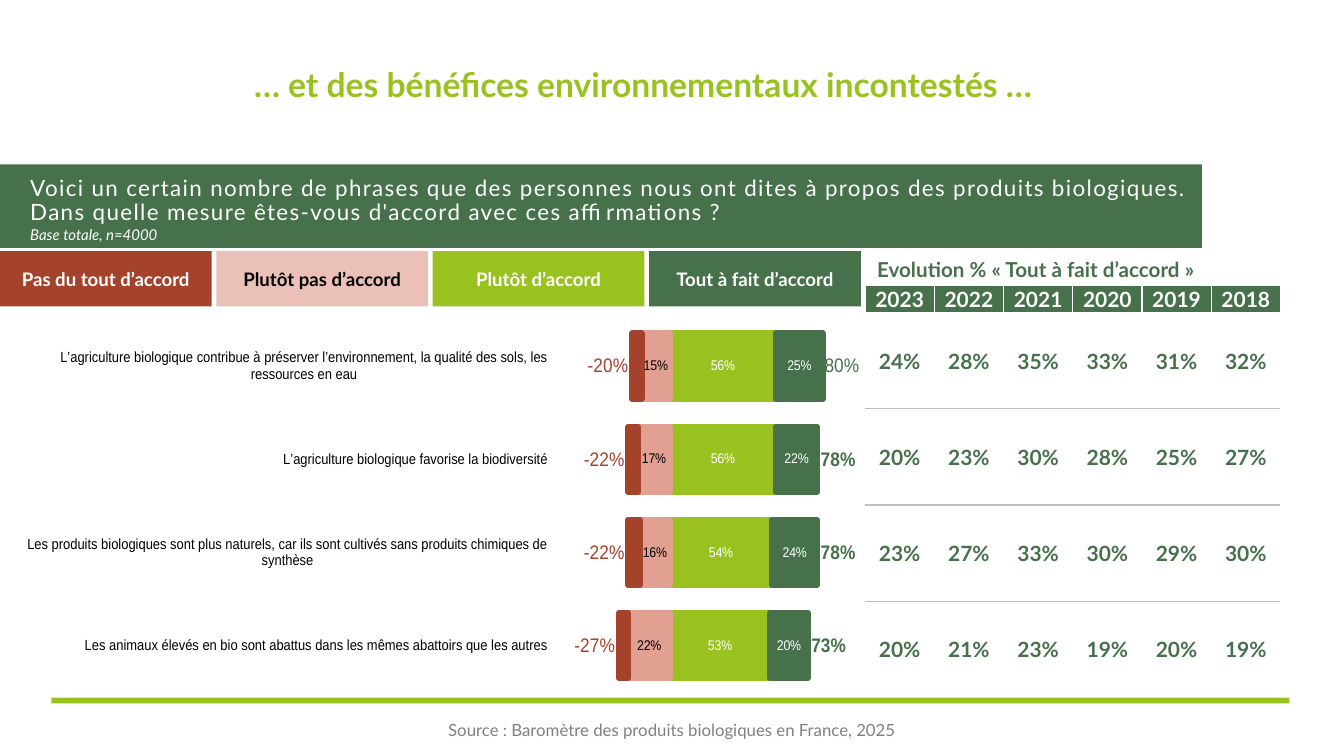
import copy

import pptx
import pptx.chart.data
import pptx.dml.color
import pptx.enum.chart
import pptx.enum.shapes
import pptx.enum.text
import pptx.oxml
import pptx.oxml.ns
import pptx.util

WIDTH, HEIGHT = 13.33, 7.5
GREEN, LIME, PINK, RED = "46714B", "99C221", "E2A092", "A5422C"
WHITE, BLACK, GREY, RULE = "FFFFFF", "000000", "808080", "BFBFBF"

TITLE = "… et des bénéfices environnementaux incontestés …"
QUESTION = ("Voici un certain nombre de phrases que des personnes nous ont dites à propos des "
            "produits biologiques. Dans quelle mesure êtes-vous d'accord avec ces affirmations ?")
BASE = "Base totale, n=4000"
SOURCE = "Source : Baromètre des produits biologiques en France, 2025"
EVOLUTION = "Evolution % «\u00a0Tout à fait d’accord\u00a0»"
LEGEND = [("Pas du tout d’accord", RED, WHITE), ("Plutôt pas d’accord", "EBC0B6", BLACK),
          ("Plutôt d’accord", LIME, WHITE), ("Tout à fait d’accord", GREEN, WHITE)]
STATEMENTS = [
    "Les animaux élevés en bio sont abattus dans les mêmes abattoirs que les autres",
    "Les produits biologiques sont plus naturels, car ils sont cultivés sans produits "
    "chimiques de synthèse",
    "L’agriculture biologique favorise la biodiversité",
    "L’agriculture biologique contribue à préserver l’environnement, la qualité des sols, "
    "les ressources en eau"]
# name, values, bar colour, label colour
ANSWERS = [("Plutôt d’accord", (0.53, 0.54, 0.56, 0.56), LIME, WHITE),
           ("Tout à fait d’accord", (0.2, 0.24, 0.22, 0.25), GREEN, WHITE),
           ("Plutôt pas d’accord", (-0.22, -0.16, -0.17, -0.15), PINK, BLACK),
           ("Pas du tout d’accord", (-0.05, -0.06, -0.05, -0.05), RED, None)]
# name, values, label colour, number format, bold
TOTALS = [("Total d’accord", (0.73, 0.78, 0.78, 0.8), GREEN, "0%", True),
          ("Total pas d’accord", (-0.27, -0.22, -0.22, -0.2), RED, "0%;-0%", False)]
TRACKING = [("2023", "2022", "2021", "2020", "2019", "2018"),
            ("24%", "28%", "35%", "33%", "31%", "32%"),
            ("20%", "23%", "30%", "28%", "25%", "27%"),
            ("23%", "27%", "33%", "30%", "29%", "30%"),
            ("20%", "21%", "23%", "19%", "20%", "19%")]

CENTER = pptx.enum.text.PP_ALIGN.CENTER
LEFT = pptx.enum.text.PP_ALIGN.LEFT
MIDDLE = pptx.enum.text.MSO_ANCHOR.MIDDLE
POSITION = pptx.enum.chart.XL_LABEL_POSITION


def color(value):
    return pptx.dml.color.RGBColor.from_string(value)


def inches(*lengths):
    return [pptx.util.Inches(length) for length in lengths]


def style(font, size, value, bold=False, name="Lato"):
    font.name, font.size, font.bold = name, pptx.util.Pt(size), bold
    font.color.rgb = color(value)


def write(frame, text, size, value, bold=False, align=LEFT, margins=(0, 0, 0, 0)):
    frame.word_wrap = True
    frame.vertical_anchor = MIDDLE
    (frame.margin_left, frame.margin_top,
     frame.margin_right, frame.margin_bottom) = inches(*margins)
    para = frame.paragraphs[0]
    para.alignment = align
    span = para.add_run()
    span.text = text
    style(span.font, size, value, bold)
    return para, span


def add_rectangle(page, place, fill):
    box = page.shapes.add_shape(pptx.enum.shapes.MSO_SHAPE.RECTANGLE, *inches(*place))
    box.shadow.inherit = False
    box.fill.solid()
    box.fill.fore_color.rgb = color(fill)
    box.line.fill.background()
    return box


def add_text(page, place, *content, **options):
    box = page.shapes.add_textbox(*inches(*place))
    return write(box.text_frame, *content, **options)


def add_second_axes(chart):
    """Move the totals to a clustered plot on hidden axes of its own."""
    area = chart.element.xpath("c:chart/c:plotArea")[0]
    stacked = area.xpath("c:barChart")[0]
    clustered = copy.deepcopy(stacked)
    stacked.addnext(clustered)
    for bars in stacked.xpath("c:ser")[len(ANSWERS):] + clustered.xpath("c:ser")[:len(ANSWERS)]:
        bars.getparent().remove(bars)
    clustered.xpath("c:grouping")[0].set("val", "clustered")
    axes = area.xpath("c:catAx | c:valAx")
    new_ids = {axis.xpath("c:axId")[0].get("val"): str(5000 + i) for i, axis in enumerate(axes)}
    last = axes[-1]
    for axis in axes:
        twin = copy.deepcopy(axis)
        twin.xpath("c:delete")[0].set("val", "1")
        last.addnext(twin)
        last = twin
        for link in twin.xpath("c:axId | c:crossAx"):
            link.set("val", new_ids[link.get("val")])
    for link in clustered.xpath("c:axId"):
        link.set("val", new_ids[link.get("val")])


def set_plot_area(chart, x, y, w, h):
    area = chart.element.xpath("c:chart/c:plotArea")[0]
    for layout in area.xpath("c:layout"):
        area.remove(layout)
    area.insert(0, pptx.oxml.parse_xml(
        f'<c:layout {pptx.oxml.ns.nsdecls("c")}><c:manualLayout><c:layoutTarget val="inner"/>'
        f'<c:xMode val="edge"/><c:yMode val="edge"/><c:x val="{x}"/><c:y val="{y}"/>'
        f'<c:w val="{w}"/><c:h val="{h}"/></c:manualLayout></c:layout>'))


def add_labels(series, size, value, number_format, position, bold=False):
    labels = series.data_labels
    labels.show_value = True
    labels.number_format, labels.number_format_is_linked = number_format, False
    labels.position = position
    style(labels.font, size, value, bold, "Arial")


def add_answers(page):
    data = pptx.chart.data.CategoryChartData(number_format="0%")
    data.categories = STATEMENTS
    for name, values, *_ in ANSWERS + TOTALS:
        data.add_series(name, values)
    chart = page.shapes.add_chart(pptx.enum.chart.XL_CHART_TYPE.BAR_STACKED,
                                  *inches(0.27, 3.17, 8.27, 3.7), data).chart
    chart.has_legend = chart.has_title = False
    style(chart.font, 10, BLACK, name="Arial")
    names, scale = chart.category_axis, chart.value_axis
    names.tick_label_position = pptx.enum.chart.XL_TICK_LABEL_POSITION.LOW
    names.format.line.fill.background()
    style(names.tick_labels.font, 10.5, BLACK, name="Arial")
    scale.minimum_scale, scale.maximum_scale = -0.6, 1
    scale.has_major_gridlines = scale.visible = False
    chart.plots[0].gap_width, chart.plots[0].overlap = 43, 100
    add_second_axes(chart)
    set_plot_area(chart, 0.585, 0, 0.412, 0.999)
    for plot in chart.plots:
        plot.vary_by_categories = False
    stacked, totals = chart.plots
    for series, (_, _, fill, ink) in zip(stacked.series, ANSWERS):
        series.invert_if_negative = False
        series.format.fill.solid()
        series.format.fill.fore_color.rgb = color(fill)
        series.format.line.color.rgb = color(fill)
        series.format.line.width = pptx.util.Pt(5)
        if ink:
            add_labels(series, 10, ink, "0%;0%", POSITION.CENTER)
    for series, (_, _, ink, number_format, bold) in zip(totals.series, TOTALS):
        series.invert_if_negative = False
        series.format.fill.background()
        series.format.line.fill.background()
        add_labels(series, 14, ink, number_format, POSITION.OUTSIDE_END, bold)
    top_label = totals.series[0].points[3].data_label
    span = top_label.text_frame.paragraphs[0].add_run()
    span.text = "80%"
    style(span.font, 14, GREEN, name="Arial")
    top_label.position = POSITION.OUTSIDE_END


def set_border(cell, sides, value):
    """Draw the listed sides 1 pt wide and clear the others."""
    properties = cell._tc.get_or_add_tcPr()
    for i, side in enumerate("LRTB"):
        paint = (f'<a:solidFill><a:srgbClr val="{value}"/></a:solidFill>'
                 if side in sides else "<a:noFill/>")
        properties.insert(i, pptx.oxml.parse_xml(
            f'<a:ln{side} {pptx.oxml.ns.nsdecls("a")} w="12700">{paint}</a:ln{side}>'))


def add_tracking(page):
    rows, columns = len(TRACKING), len(TRACKING[0])
    table = page.shapes.add_table(rows, columns, *inches(8.58, 2.83, 4.12, 4.09)).table
    for column in table.columns:
        column.width = pptx.util.Inches(4.12 / columns)
    for r, values in enumerate(TRACKING):
        header = r == 0
        table.rows[r].height = pptx.util.Inches(0.27 if header else 0.955)
        for c, value in enumerate(values):
            cell = table.cell(r, c)
            cell.fill.solid()
            cell.fill.fore_color.rgb = color(GREEN if header else WHITE)
            write(cell.text_frame, value, 15, WHITE if header else GREEN, True, CENTER)
            cell.vertical_anchor = MIDDLE
            (cell.margin_left, cell.margin_top,
             cell.margin_right, cell.margin_bottom) = inches(0.01, 0.01, 0.01, 0)
            sides = "LRT" if header else ("T" if r > 1 else "") + ("B" if r < rows - 1 else "")
            set_border(cell, sides, WHITE if header else RULE)


def main():
    deck = pptx.Presentation()
    deck.slide_width, deck.slide_height = inches(WIDTH, HEIGHT)
    page = deck.slides.add_slide(deck.slide_layouts[5])
    title = page.shapes.title
    title.left, title.top, title.width, title.height = inches(2.52, 0.38, 9.4, 0.95)
    para, _ = write(title.text_frame, TITLE, 24, LIME, True)
    para.line_spacing = 0.9

    add_rectangle(page, (0, 1.63, 11.92, 0.83), GREEN)
    add_rectangle(page, (0.51, 6.92, 12.28, 0.06), LIME)
    add_text(page, (3.85, 6.97, 5.63, 0.54), SOURCE, 12, GREY, align=CENTER)
    para, span = add_text(page, (0.3, 1.75, 11.62, 0.48), QUESTION, 16, WHITE)
    para.line_spacing = pptx.util.Pt(17.3)
    span.font._element.set("spc", "100")
    _, span = add_text(page, (0.3, 2.23, 11.62, 0.2), BASE, 10.7, WHITE)
    span.font.italic = True

    add_answers(page)
    for i, (label, fill, ink) in enumerate(LEGEND):
        box = add_rectangle(page, (i * 2.146, 2.49, 2.1, 0.55), fill)
        write(box.text_frame, label, 13.3, ink, True, CENTER)
    add_tracking(page)
    add_text(page, (8.6, 2.5, 3.78, 0.35), EVOLUTION, 14.7, GREEN, True,
             margins=(0.1, 0.05, 0.1, 0.05))
    deck.save("out.pptx")


if __name__ == "__main__":
    main()
